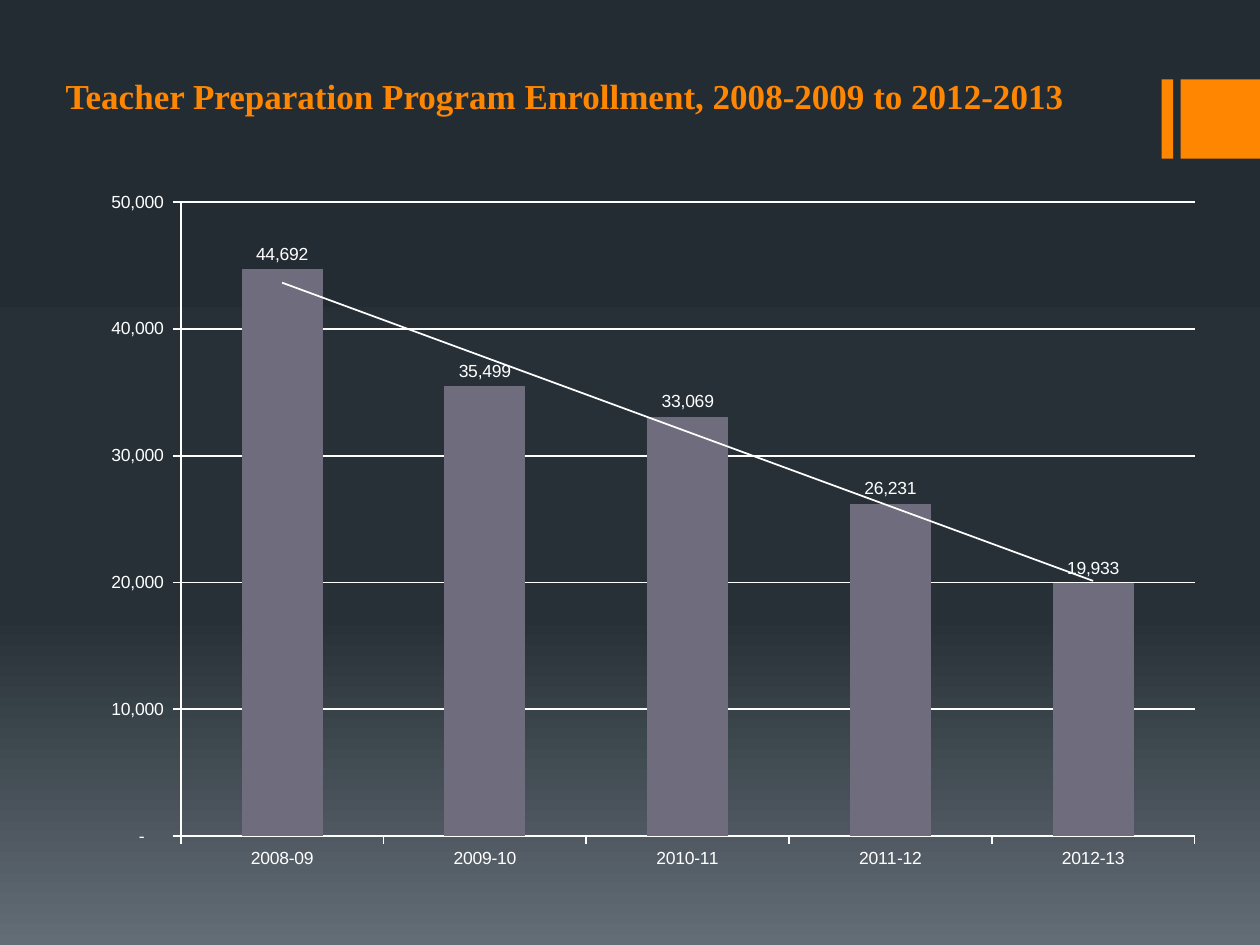
from copy import deepcopy

from pptx import Presentation
from pptx.chart.data import CategoryChartData
from pptx.dml.color import RGBColor
from pptx.enum.chart import XL_CHART_TYPE as Kind
from pptx.enum.chart import XL_LABEL_POSITION as Spot
from pptx.enum.chart import XL_TICK_MARK as Tick
from pptx.enum.shapes import MSO_SHAPE as Form
from pptx.enum.text import MSO_ANCHOR as Anchor
from pptx.enum.text import PP_ALIGN as Align
from pptx.oxml import parse_xml
from pptx.oxml.ns import nsdecls
from pptx.util import Inches, Pt

NUM = r'_(* #,##0_);_(* \(#,##0\);_(* "-"??_);_('
ENROLLED = {
    "2008-09": 44692,
    "2009-10": 35499,
    "2010-11": 33069,
    "2011-12": 26231,
    "2012-13": 19933,
}


def rgb(code):
    return RGBColor.from_string(code)


def style(item, **values):
    for name, value in values.items():
        setattr(item, name, value)


class Deck:
    accent, ink, bar = "FF8600", "FFFFFF", "6F6C7D"
    sky = [(0, "242C33"), (0.65, "273037"), (1, "636D76")]

    def __init__(self):
        self.prs = Presentation()
        style(self.prs, slide_width=Inches(10), slide_height=Inches(7.5))
        self.slide = self.prs.slides.add_slide(self.prs.slide_layouts[5])

    def back(self):
        fill = self.slide.background.fill
        fill.gradient()
        fill.gradient_angle = 270
        stops = self.slide.element.xpath(".//a:gsLst")[0]
        stops.append(deepcopy(stops[0]))
        for stop, (place, code) in zip(fill.gradient_stops, self.sky):
            stop.position = place
            stop.color.rgb = rgb(code)

    def block(self, *box):
        shape = self.slide.shapes.add_shape(Form.RECTANGLE, *map(Inches, box))
        shape.shadow.inherit = False
        shape.fill.solid()
        shape.fill.fore_color.rgb = rgb(self.accent)
        shape.line.fill.background()

    def title(self, text, left, top, width, height):
        head = self.slide.shapes.title
        style(head, left=Inches(left), top=Inches(top),
              width=Inches(width), height=Inches(height))
        frame = head.text_frame
        frame.text = text
        style(frame, word_wrap=False, vertical_anchor=Anchor.TOP,
              margin_top=Inches(0.07))
        para = frame.paragraphs[0]
        para.alignment = Align.LEFT
        font = para.runs[0].font
        style(font, name="Times New Roman", size=Pt(20), bold=True)
        font.color.rgb = rgb(self.accent)

    def rule(self, line):
        line.color.rgb = rgb(self.ink)
        line.width = Pt(1)

    def chart(self, values, *box):
        data = CategoryChartData(number_format=NUM)
        data.categories = list(values)
        data.add_series("Series 1", list(values.values()))
        chart = self.slide.shapes.add_chart(
            Kind.COLUMN_CLUSTERED, *map(Inches, box), data).chart
        style(chart, has_legend=False, has_title=False)
        style(chart.font, name="Arial", size=Pt(10))
        chart.font.color.rgb = rgb(self.ink)

        x, y = chart.category_axis, chart.value_axis
        for axis in (x, y):
            style(axis, major_tick_mark=Tick.OUTSIDE, minor_tick_mark=Tick.NONE)
            self.rule(axis.format.line)
        style(y, minimum_scale=0, maximum_scale=50000, major_unit=10000,
              has_major_gridlines=True)
        self.rule(y.major_gridlines.format.line)
        style(y.tick_labels, number_format=NUM, number_format_is_linked=False)

        plot = chart.plots[0]
        style(plot, gap_width=150, vary_by_categories=False)
        bars = plot.series[0]
        bars.format.fill.solid()
        bars.format.fill.fore_color.rgb = rgb(self.bar)
        style(bars.data_labels, show_value=True, position=Spot.OUTSIDE_END,
              number_format=NUM, number_format_is_linked=False)
        self.trend(bars)
        self.inset(chart, x=0.085, y=0.033, w=0.894, h=0.902)

    def trend(self, bars):
        """Add a linear trend line to a series."""
        line = parse_xml(
            f'<c:trendline {nsdecls("c", "a")}><c:spPr><a:ln w="{Pt(1)}">'
            f'<a:solidFill><a:srgbClr val="{self.ink}"/></a:solidFill></a:ln>'
            '</c:spPr><c:trendlineType val="linear"/><c:dispRSqr val="0"/>'
            '<c:dispEq val="0"/></c:trendline>')
        bars._element.xpath("c:cat")[0].addprevious(line)

    def inset(self, chart, **parts):
        """Place the inner plot area by fractions of the chart."""
        area = chart._chartSpace.xpath(".//c:plotArea")[0]
        for old in area.xpath("c:layout"):
            area.remove(old)
        sizes = "".join(f'<c:{k} val="{v}"/>' for k, v in parts.items())
        area.insert(0, parse_xml(
            f'<c:layout {nsdecls("c")}><c:manualLayout>'
            '<c:layoutTarget val="inner"/><c:xMode val="edge"/>'
            f'<c:yMode val="edge"/>{sizes}</c:manualLayout></c:layout>'))


def main():
    deck = Deck()
    deck.back()
    for left, width in ((9.22, 0.09), (9.37, 0.63)):
        deck.block(left, 0.63, width, 0.63)
    deck.title("Teacher Preparation Program Enrollment, 2008-2009 to 2012-2013",
               0.42, 0.52, 8.17, 0.74)
    deck.chart(ENROLLED, 0.67, 1.42, 9, 5.58)
    deck.prs.save("out.pptx")


if __name__ == "__main__":
    main()
